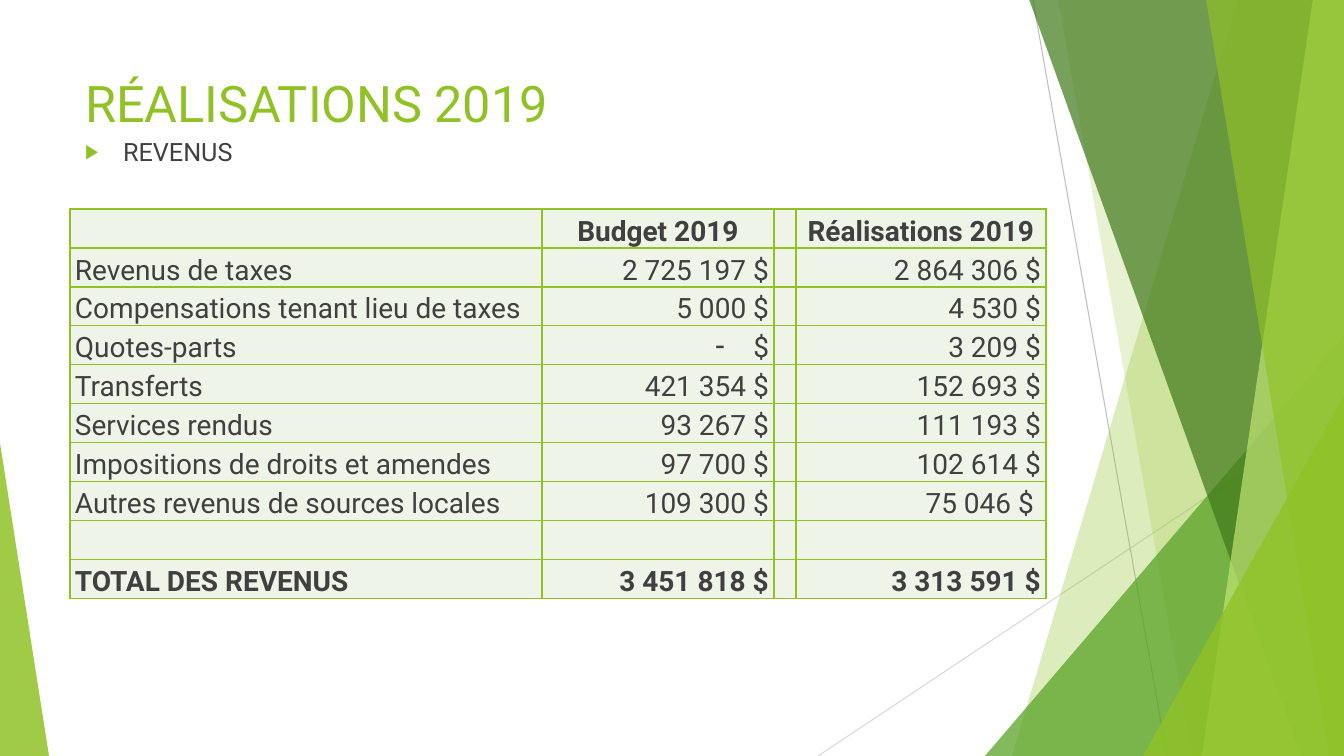
from lxml import etree
from pptx import Presentation
from pptx.dml.color import RGBColor
from pptx.enum.shapes import MSO_CONNECTOR, MSO_SHAPE
from pptx.enum.text import MSO_ANCHOR, MSO_AUTO_SIZE, PP_ALIGN
from pptx.oxml.ns import qn
from pptx.util import Emu, Pt

LEFT, CENTER, RIGHT = PP_ALIGN.LEFT, PP_ALIGN.CENTER, PP_ALIGN.RIGHT
TOP, BOTTOM = MSO_ANCHOR.TOP, MSO_ANCHOR.BOTTOM
NO_FIT = MSO_AUTO_SIZE.NONE
STRAIGHT, TRIANGLE = MSO_CONNECTOR.STRAIGHT, MSO_SHAPE.ISOSCELES_TRIANGLE

WIDTH, HEIGHT = 1344, 756
EMU_PER_PX = 914400 / 100.8
FONT = "Roboto"
GREEN, DARK, CELL = "90C226", "404040", "EEF4E8"

TITLE = "RÉALISATIONS 2019"
SUBTITLE = "REVENUS"
DASH = "-"
ROWS = [
    ("", "Budget 2019", "", "Réalisations 2019"),
    ("Revenus de taxes", "2 725 197 $", "", "2 864 306 $"),
    ("Compensations tenant lieu de taxes", "5 000 $", "", "4 530 $"),
    ("Quotes-parts", DASH, "", "3 209 $"),
    ("Transferts", "421 354 $", "", "152 693 $"),
    ("Services rendus", "93 267 $", "", "111 193 $"),
    ("Impositions de droits et amendes", "97 700 $", "", "102 614 $"),
    ("Autres revenus de sources locales", "109 300 $", "", "75 046 $ "),
    ("", "", "", ""),
    ("TOTAL DES REVENUS", "3 451 818 $", "", "3 313 591 $"),
]
COLUMNS = [472, 232, 22, 250]
ROW_HEIGHT = 39
TABLE_LEFT, TABLE_TOP = 70, 209

# Start x, start y, end x, end y, colour
LINES = [(1033, 0, 1167, 756, "BFBFBF"), (1344, 406, 818, 756, "D9D9D9")]
# Band: x at top left, x at bottom left, colour, opacity
# Triangle: left, top, width, height, apex, colour, opacity
FACETS = [
    ("band", 1238, 1012, GREEN, 30),
    ("band", 1058, 1192, GREEN, 20),
    ("triangle", 985, 336, 359, 420, 1, "54A021", 72),
    ("band", 1029, 1301, "3F7819", 70),
    ("band", 1313, 1202, "C0E474", 70),
    ("band", 1206, 1329, GREEN, 65),
    ("triangle", 1143, 396, 201, 360, 1, GREEN, 80),
    ("triangle", 0, 443, 49, 313, 0, GREEN, 85),
]


def px(n):
    return Emu(round(n * EMU_PER_PX))


def rgb(color):
    return RGBColor.from_string(color)


def sub(parent, tag, **attrs):
    return etree.SubElement(parent, qn(tag), {k: str(v) for k, v in attrs.items()})


def set_all(target, **values):
    for name, value in values.items():
        setattr(target, name, value)


def write(p, text, size, color, bold=False, align=LEFT):
    p.alignment = align
    r = p.add_run()
    r.text = text
    set_all(r.font, name=FONT, size=Pt(size), bold=bold)
    r.font.color.rgb = rgb(color)


def add_bullet(p, char, color, percent):
    pPr = p._p.get_or_add_pPr()
    pPr.set("marL", str(px(38)))
    pPr.set("indent", str(-px(38)))
    sub(sub(pPr, "a:buClr"), "a:srgbClr", val=color)
    sub(pPr, "a:buSzPct", val=percent * 1000)
    sub(pPr, "a:buChar", char=char)


def add_line(shapes, x1, y1, x2, y2, color):
    line = shapes.add_connector(STRAIGHT, px(x1), px(y1), px(x2), px(y2))
    line.line.color.rgb = rgb(color)
    line.line.width = Pt(0.75)
    sub(line._element.spPr, "a:effectLst")


def add_band(shapes, top_x, bottom_x):
    """Four-sided band that reaches the right edge of the slide."""
    outline = shapes.build_freeform(top_x, -1, scale=EMU_PER_PX)
    outline.add_line_segments([(WIDTH, -1), (WIDTH, HEIGHT), (bottom_x, HEIGHT)])
    return outline.convert_to_shape()


def add_triangle(shapes, left, top, width, height, apex):
    triangle = shapes.add_shape(TRIANGLE, px(left), px(top), px(width), px(height))
    triangle.adjustments[0] = apex
    return triangle


def add_facet(shapes, kind, *values):
    *geometry, color, opacity = values
    facet = {"band": add_band, "triangle": add_triangle}[kind](shapes, *geometry)
    facet.shadow.inherit = False
    facet.line.fill.background()
    facet.fill.solid()
    facet.fill.fore_color.rgb = rgb(color)
    tint = facet._element.spPr.find(qn("a:solidFill")).find(qn("a:srgbClr"))
    sub(tint, "a:alpha", val=opacity * 1000)


def fill_placeholder(shape, text, size, color, top, height):
    """Move the placeholder above the background and write its text."""
    shape.element.getparent().append(shape.element)
    set_all(shape, left=px(75), top=px(top), width=px(948), height=px(height))
    tf = shape.text_frame
    set_all(tf, word_wrap=True, auto_size=NO_FIT, vertical_anchor=TOP)
    p = tf.paragraphs[0]
    write(p, text, size, color)
    return p


def format_cell(cell):
    set_all(cell, margin_left=px(5), margin_right=px(5), margin_top=0,
            margin_bottom=0, vertical_anchor=BOTTOM)
    tcPr = cell._tc.get_or_add_tcPr()
    for side in "LRTB":
        border = sub(tcPr, f"a:ln{side}", w=Pt(1))
        sub(sub(border, "a:solidFill"), "a:srgbClr", val=GREEN)
    cell.fill.solid()
    cell.fill.fore_color.rgb = rgb(CELL)


def add_revenue_table(shapes):
    table = shapes.add_table(
        len(ROWS), len(COLUMNS), px(TABLE_LEFT), px(TABLE_TOP),
        px(sum(COLUMNS)), px(ROW_HEIGHT * len(ROWS))).table
    set_all(table, first_row=False, horz_banding=False)
    for column, width in zip(table.columns, COLUMNS):
        column.width = px(width)
    for i, row in enumerate(ROWS):
        table.rows[i].height = px(ROW_HEIGHT)
        for j, text in enumerate(row):
            cell = table.cell(i, j)
            format_cell(cell)
            if not text:
                continue
            p = cell.text_frame.paragraphs[0]
            align = CENTER if i == 0 else RIGHT if j else LEFT
            bold = i in (0, len(ROWS) - 1)
            write(p, "$" if text == DASH else text, 20, DARK, bold, align)
            if text == DASH:
                add_bullet(p, DASH, DARK, 100)


def main():
    prs = Presentation()
    set_all(prs, slide_width=px(WIDTH), slide_height=px(HEIGHT))
    s = prs.slides.add_slide(prs.slide_layouts[1])
    title, body = s.placeholders
    for line in LINES:
        add_line(s.shapes, *line)
    for facet in FACETS:
        add_facet(s.shapes, *facet)
    fill_placeholder(title, TITLE, 36, GREEN, 67, 145)
    p = fill_placeholder(body, SUBTITLE, 18, DARK, 131, 534)
    p.space_before = Pt(10)
    add_bullet(p, "▶", GREEN, 80)
    add_revenue_table(s.shapes)
    prs.save("out.pptx")


if __name__ == "__main__":
    main()
